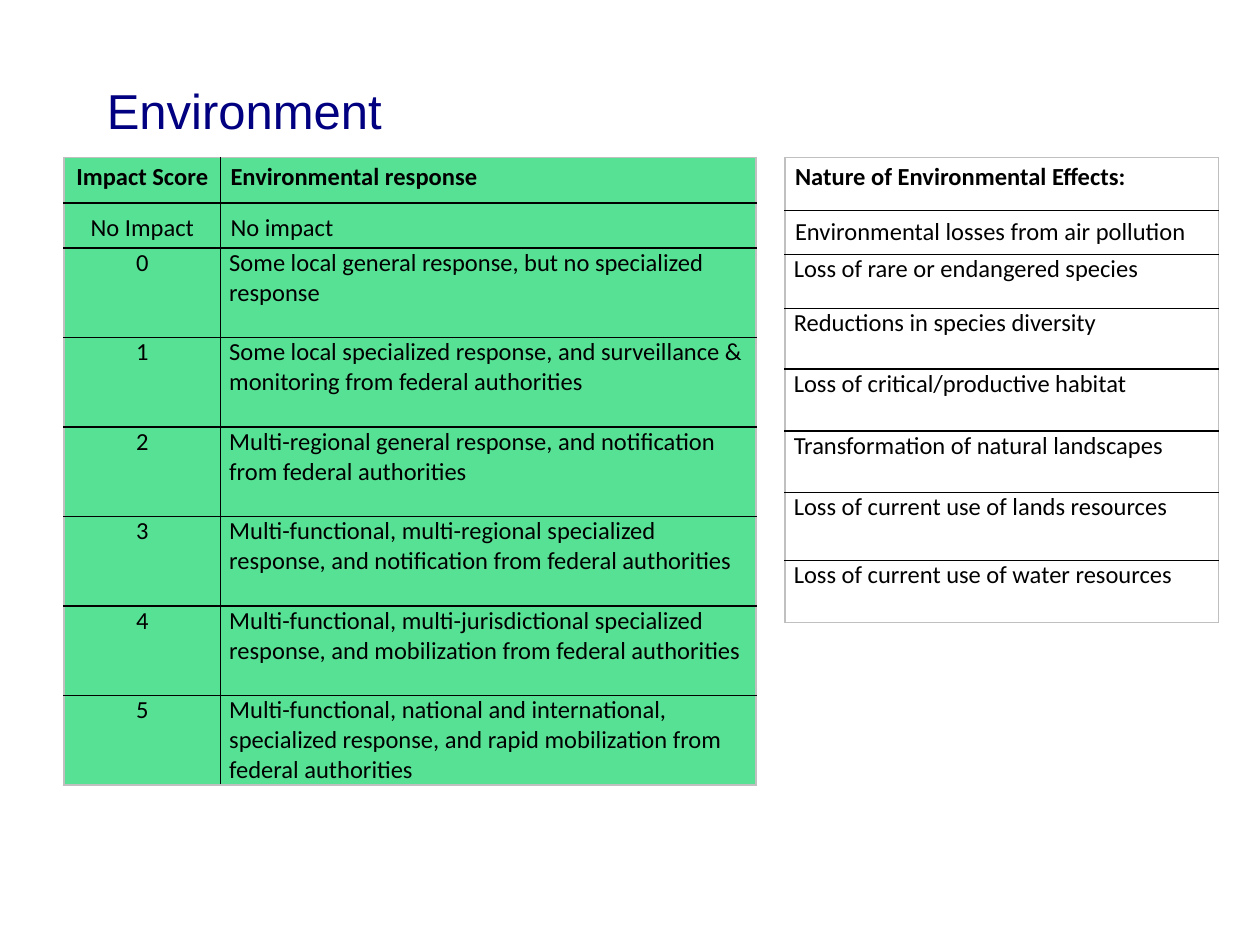
from lxml.etree import SubElement
from pptx import Presentation
from pptx.dml.color import RGBColor
from pptx.enum.text import MSO_ANCHOR, PP_ALIGN
from pptx.oxml import parse_xml
from pptx.oxml.ns import nsdecls, qn
from pptx.util import Inches, Pt

NAVY = RGBColor(0x00, 0x00, 0x80)
BLACK = RGBColor(0x00, 0x00, 0x00)
GRAY = RGBColor(0xC0, 0xC0, 0xC0)
GREEN = RGBColor(0x00, 0xD2, 0x5F)
WHITE = RGBColor(0xFF, 0xFF, 0xFF)

SCORES = [
    ("Impact Score", "Environmental response"),
    ("No Impact", "No impact"),
    ("0", "Some local general response, but no specialized response"),
    ("1", "Some local specialized response, and surveillance & "
          "monitoring from federal authorities"),
    ("2", "Multi-regional general response, and notification from federal authorities"),
    ("3", "Multi-functional, multi-regional specialized response, "
          "and notification from federal authorities"),
    ("4", "Multi-functional, multi-jurisdictional specialized response, "
          "and mobilization from federal authorities"),
    ("5", "Multi-functional, national and international, specialized response, "
          "and rapid mobilization from federal authorities"),
]
EFFECTS = [
    ("Nature of Environmental Effects:",),
    ("Environmental losses from air pollution",),
    ("Loss of rare or endangered species",),
    ("Reductions in species diversity",),
    ("Loss of critical/productive habitat",),
    ("Transformation of natural landscapes",),
    ("Loss of current use of lands resources",),
    ("Loss of current use of water resources",),
]


def write(frame, text, font="Calibri", size=14, color=BLACK, bold=False,
          align=PP_ALIGN.LEFT, spacing=1.0):
    para = frame.paragraphs[0]
    para.alignment = align
    para.line_spacing = spacing
    run = para.add_run()
    run.text = text
    run.font.name = font
    run.font.size = Pt(size)
    run.font.bold = bold
    run.font.color.rgb = color


def add_title(slide, text, left, top, width, height):
    frame = slide.shapes.add_textbox(
        Inches(left), Inches(top), Inches(width), Inches(height)).text_frame
    frame.word_wrap = True
    frame.vertical_anchor = MSO_ANCHOR.MIDDLE
    write(frame, text, font="Arial", size=28, color=NAVY)


def paint(cell, color, alpha):
    """Fill a cell; alpha is its opacity in percent."""
    cell.fill.solid()
    cell.fill.fore_color.rgb = color
    if alpha < 100:
        tint = cell._tc.tcPr.find(qn("a:solidFill")).find(qn("a:srgbClr"))
        SubElement(tint, qn("a:alpha")).set("val", str(alpha * 1000))


def rule(cell, edges):
    """Draw the left, right, top and bottom lines: gray on the table's rim, else black."""
    for i, (side, rim) in enumerate(zip("LRTB", edges)):
        line = parse_xml(
            f'<a:ln{side} {nsdecls("a")} w="{Pt(1)}"><a:solidFill>'
            f'<a:srgbClr val="{GRAY if rim else BLACK}"/></a:solidFill></a:ln{side}>')
        cell._tc.tcPr.insert(i, line)


def add_grid(slide, data, left, top, cols, rows, color, alpha=100, center=False, loose=1):
    """Place a table; center applies to column one, loose counts rows spaced at 1.15."""
    table = slide.shapes.add_table(
        len(rows), len(cols), Inches(left), Inches(top),
        Inches(sum(cols)), Inches(sum(rows))).table
    table.first_row = table.horz_banding = False
    for col, width in zip(table.columns, cols):
        col.width = Inches(width)
    for row, height in zip(table.rows, rows):
        row.height = Inches(height)
    for r, texts in enumerate(data):
        for c, text in enumerate(texts):
            cell = table.cell(r, c)
            cell.margin_left = cell.margin_right = Inches(0.08 if r < 2 else 0.07)
            cell.margin_top = cell.margin_bottom = 0
            cell.vertical_anchor = MSO_ANCHOR.MIDDLE if r == 1 else MSO_ANCHOR.TOP
            write(cell.text_frame, text, bold=r == 0,
                  align=PP_ALIGN.CENTER if center and c == 0 else PP_ALIGN.LEFT,
                  spacing=1.15 if r < loose else 1.0)
            paint(cell, color, alpha)
            rule(cell, (c == 0, c == len(cols) - 1, r == 0, r == len(rows) - 1))


def main():
    prs = Presentation()
    prs.slide_width, prs.slide_height = Inches(10), Inches(7.5)
    slide = prs.slides.add_slide(prs.slide_layouts[6])
    add_title(slide, "Environment", 0.75, 0.25, 8.5, 1.25)
    add_grid(slide, SCORES, 0.51, 1.25, [1.24, 4.25], [0.36] * 2 + [0.71] * 6,
             GREEN, alpha=66, center=True, loose=2)
    add_grid(slide, EFFECTS, 6.23, 1.25, [3.44],
             [0.42, 0.35, 0.43, 0.48, 0.49, 0.49, 0.54, 0.49], WHITE)
    prs.save("out.pptx")


if __name__ == "__main__":
    main()
